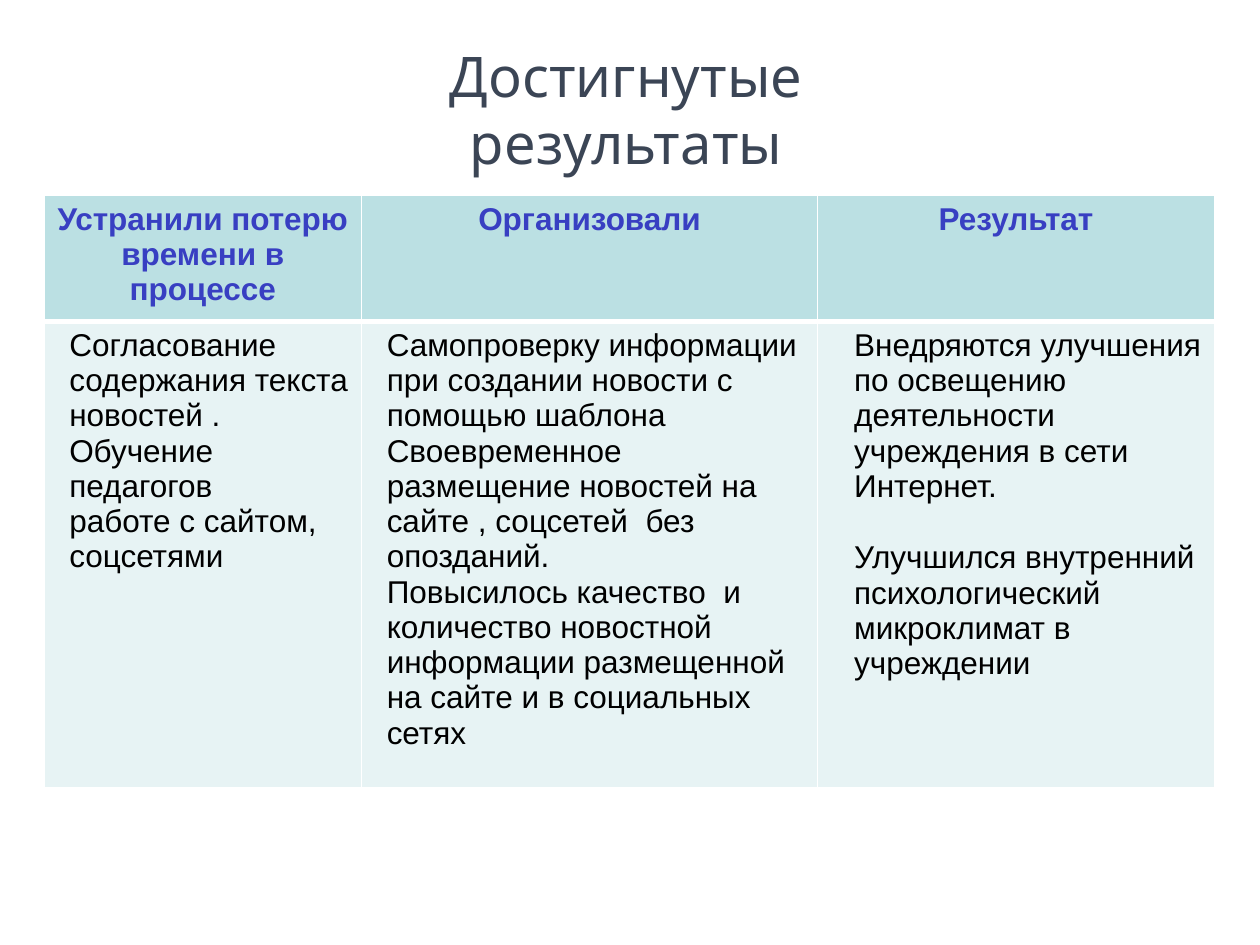
import pptx
import pptx.dml.color
import pptx.enum.text
import pptx.oxml.ns
import pptx.util
from lxml import etree
from pptx.util import Inches

RGBColor = pptx.dml.color.RGBColor
Align = pptx.enum.text.PP_ALIGN
TITLE_COLOR = RGBColor(0x3B, 0x45, 0x55)
HEADER_COLOR = RGBColor(0x38, 0x3F, 0xC2)
BODY_COLOR = RGBColor(0x00, 0x00, 0x00)
HEADER_FILL = RGBColor(0xBB, 0xE0, 0xE3)
BODY_FILL = RGBColor(0xE7, 0xF3, 0xF4)
BORDER_COLOR = RGBColor(0xFF, 0xFF, 0xFF)

TITLE = "Достигнутые результаты"
COLUMNS = [
    {"width": 2.52, "indent": 0.1, "gap": 0,
     "header": "Устранили потерю времени в процессе",
     "body": ["Согласование содержания текста новостей .",
              "Обучение педагогов",
              "работе с сайтом, соцсетями"]},
    {"width": 3.62, "indent": 0.1, "gap": 0,
     "header": "Организовали",
     "body": ["Самопроверку информации при создании новости с помощью шаблона "
              "Своевременное размещение новостей на сайте , соцсетей  без опозданий.",
              "Повысилось качество  и количество новостной информации "
              "размещенной на сайте и в социальных сетях"]},
    {"width": 3.15, "indent": 0.19, "gap": 20.7,
     "header": "Результат",
     "body": ["Внедряются улучшения по освещению деятельности учреждения в сети Интернет.",
              "Улучшился внутренний психологический микроклимат в учреждении"]},
]
ROW_HEIGHTS = (0.94, 3.45)


def write_text(frame, texts, size=18, font="Arial", color=BODY_COLOR,
               bold=False, align=Align.LEFT, indent=0, gap=0):
    """Fill a text frame with one formatted paragraph per text."""
    for number, text in enumerate(texts):
        para = frame.add_paragraph() if number else frame.paragraphs[0]
        para.alignment = align
        properties = para._p.get_or_add_pPr()
        properties.set("marL", str(Inches(indent)))
        properties.set("indent", "0")
        if number and gap:
            para.space_before = pptx.util.Pt(gap)
        span = para.add_run()
        span.text = text
        span.font.size = pptx.util.Pt(size)
        span.font.name = font
        span.font.bold = bold
        span.font.color.rgb = color


def style_cell(cell, fill, top=1, bottom=1):
    """Give a cell its white borders and its fill."""
    properties = cell._tc.get_or_add_tcPr()
    for side, width in (("L", 1), ("R", 1), ("T", top), ("B", bottom)):
        line = etree.SubElement(properties, pptx.oxml.ns.qn(f"a:ln{side}"),
                                w=str(pptx.util.Pt(width)))
        paint = etree.SubElement(line, pptx.oxml.ns.qn("a:solidFill"))
        etree.SubElement(paint, pptx.oxml.ns.qn("a:srgbClr"), val=str(BORDER_COLOR))
    cell.fill.solid()
    cell.fill.fore_color.rgb = fill


def place_title(page, left, top, width, height):
    """Place the title in its placeholder."""
    box = page.shapes.title
    box.left, box.top, box.width, box.height = left, top, width, height
    frame = box.text_frame
    frame.word_wrap = True
    frame.auto_size = pptx.enum.text.MSO_AUTO_SIZE.SHAPE_TO_FIT_TEXT
    frame.vertical_anchor = pptx.enum.text.MSO_ANCHOR.TOP
    write_text(frame, [TITLE], size=32, font="Quicksand", color=TITLE_COLOR,
               align=Align.CENTER)


def place_results(page, left, top, width, height):
    """Place the table of results, one column for each topic."""
    table = page.shapes.add_table(len(ROW_HEIGHTS), len(COLUMNS),
                                  left, top, width, height).table
    for row, row_height in zip(table.rows, ROW_HEIGHTS):
        row.height = Inches(row_height)
    for number, column in enumerate(COLUMNS):
        table.columns[number].width = Inches(column["width"])
        header, body = table.cell(0, number), table.cell(1, number)
        style_cell(header, HEADER_FILL, bottom=3)
        style_cell(body, BODY_FILL, top=3)
        write_text(header.text_frame, [column["header"]], color=HEADER_COLOR,
                   bold=True, align=Align.CENTER)
        write_text(body.text_frame, column["body"], indent=column["indent"],
                   gap=column["gap"])


def main():
    """Build the deck and save it."""
    deck = pptx.Presentation()
    deck.slide_width, deck.slide_height = Inches(10), Inches(7.5)
    page = deck.slides.add_slide(deck.slide_layouts[5])
    place_title(page, Inches(2.32), Inches(0.28), Inches(5.3), Inches(1.18))
    place_results(page, Inches(0.35), Inches(1.55), Inches(9.29),
                  Inches(sum(ROW_HEIGHTS)))
    deck.save("out.pptx")


if __name__ == "__main__":
    main()
